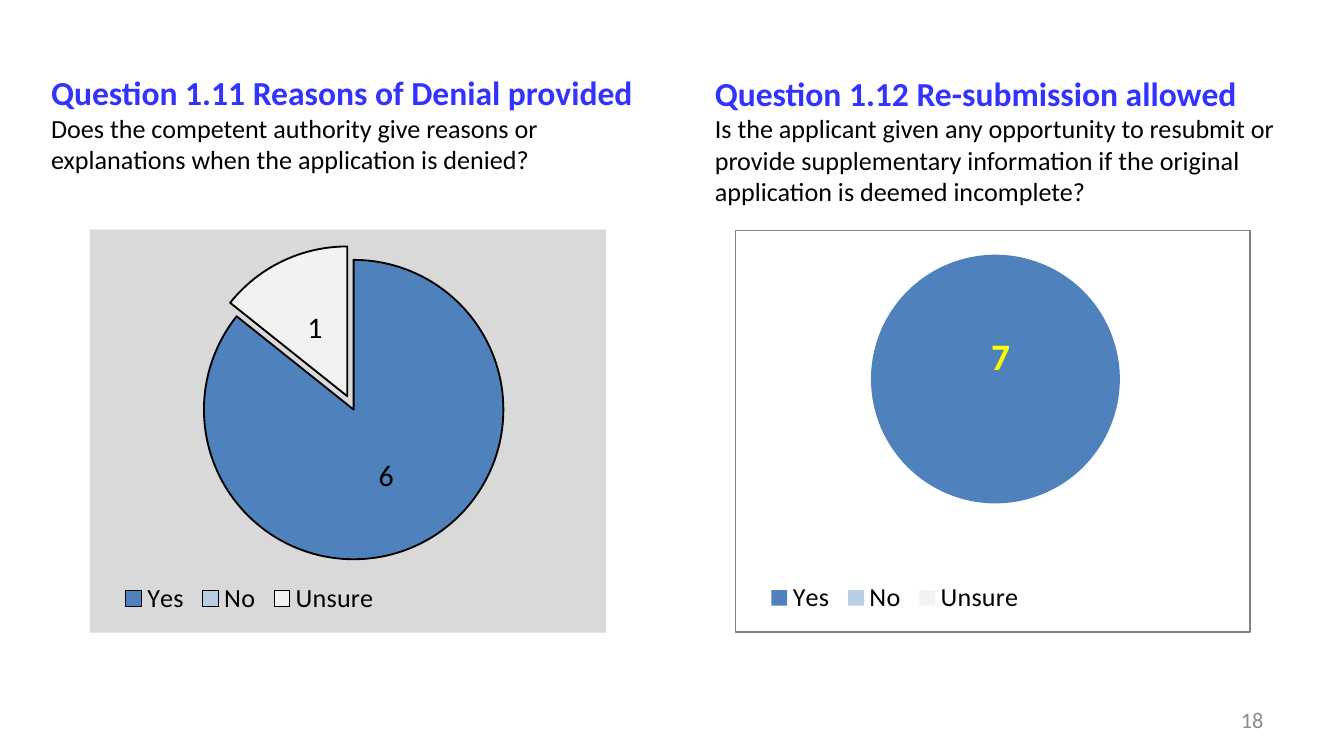
from lxml import etree
from pptx import Presentation
from pptx.chart.data import CategoryChartData
from pptx.dml.color import RGBColor
from pptx.enum.chart import XL_CHART_TYPE, XL_LABEL_POSITION, XL_LEGEND_POSITION
from pptx.enum.text import MSO_ANCHOR, MSO_AUTO_SIZE, PP_ALIGN
from pptx.oxml import parse_xml
from pptx.oxml.ns import nsdecls, qn
from pptx.util import Cm, Pt

PIE = XL_CHART_TYPE.PIE
CENTER = XL_LABEL_POSITION.CENTER
BOTTOM = XL_LEGEND_POSITION.BOTTOM
MIDDLE = MSO_ANCHOR.MIDDLE
NO_AUTOFIT = MSO_AUTO_SIZE.NONE
LEFT, RIGHT = PP_ALIGN.LEFT, PP_ALIGN.RIGHT

BLACK = RGBColor(0x00, 0x00, 0x00)
HEADING_BLUE = RGBColor(0x33, 0x33, 0xFF)
NUMBER_GRAY = RGBColor(0x8C, 0x8C, 0x8C)
YELLOW = RGBColor(0xFF, 0xFF, 0x00)
SLICES = [RGBColor(0x4F, 0x81, 0xBD), RGBColor(0xB9, 0xCD, 0xE5), RGBColor(0xF2, 0xF2, 0xF2)]
FONT = "Calibri"

GRAY_PANEL = '<a:solidFill><a:srgbClr val="D9D9D9"/></a:solidFill><a:ln><a:noFill/></a:ln>'
FRAMED_PANEL = ('<a:noFill/><a:ln w="9525"><a:solidFill><a:srgbClr val="808080"/>'
                '</a:solidFill></a:ln>')


def format_text(target, text=None, size=14, color=BLACK, bold=False):
    """Add text to a paragraph, or format an existing font when text is None."""
    font = target
    if text is not None:
        r = target.add_run()
        r.text = text
        font = r.font
    font.name, font.size, font.bold = FONT, Pt(size), bold
    font.color.rgb = color


def set_layout(parent, index, **values):
    """Place a chart part by fractions of the chart's size."""
    for old in parent.findall(qn("c:layout")):
        parent.remove(old)
    layout = parse_xml(f'<c:layout {nsdecls("c")}><c:manualLayout/></c:layout>')
    for tag, value in values.items():
        etree.SubElement(layout[0], qn(f"c:{tag}")).set("val", str(value))
    parent.insert(index, layout)


prs = Presentation()
prs.slide_width, prs.slide_height = Cm(25.4), Cm(14.29)
s = prs.slides.add_slide(prs.slide_layouts[5])

# Left question in the title
title = s.shapes.title
title.left, title.top, title.width, title.height = Cm(0.71), Cm(0.53), Cm(11.84), Cm(3.61)
tf = title.text_frame
tf.word_wrap, tf.auto_size, tf.vertical_anchor = True, NO_AUTOFIT, MIDDLE
p = tf.paragraphs[0]
p.alignment = LEFT
format_text(p, "Question 1.11 Reasons of Denial provided", size=18, color=HEADING_BLUE, bold=True)
p.add_line_break()
format_text(p, "Does the competent authority give reasons or explanations "
               "when the application is denied?")

# Right question and slide number
question = [
    ("Question 1.12 Re-submission allowed", dict(size=18, color=HEADING_BLUE, bold=True)),
    ("Is the applicant given any opportunity to resubmit or provide supplementary "
     "information if the original application is deemed incomplete?", {}),
]
number = [("18", dict(size=12, color=NUMBER_GRAY))]
for box, align, paragraphs in [
    ((13.26, 1.14, 11.43, 3), LEFT, question),
    ((18.21, 13.23, 5.92, 0.76), RIGHT, number),
]:
    tf = s.shapes.add_textbox(*map(Cm, box)).text_frame
    tf.word_wrap, tf.vertical_anchor = True, MIDDLE
    for i, (text, fmt) in enumerate(paragraphs):
        p = tf.add_paragraph() if i else tf.paragraphs[0]
        p.alignment = align
        format_text(p, text, **fmt)

# Answers: left edge, values, panel, outlined slices, label format, label shift, pie area
charts = [
    (1.7, (6, 0, 1), GRAY_PANEL, True, dict(size=16), None,
     dict(x=0.2, y=0.04, w=0.61, h=0.78)),
    (13.89, (7, 0, 0), FRAMED_PANEL, False, dict(size=20, color=YELLOW, bold=True),
     dict(x=0.01, y=-0.21), dict(x=0.25, y=0.03, w=0.51, h=0.65)),
]
for left, values, panel, outlined, label_format, label_shift, area in charts:
    data = CategoryChartData()
    data.categories = ["Yes", "No", "Unsure"]
    data.add_series("Series 1", values)
    chart = s.shapes.add_chart(PIE, Cm(left), Cm(4.34), Cm(9.75), Cm(7.62), data).chart
    chart.has_title = False
    format_text(chart.font, size=10)
    chart.has_legend = True
    legend = chart.legend
    legend.position, legend.include_in_layout = BOTTOM, False
    format_text(legend.font)

    plot = chart.plots[0]
    plot.vary_by_categories = True
    series = plot.series[0]
    labels = series.data_labels
    labels.show_value, labels.position = True, CENTER
    format_text(labels.font, **label_format)
    for i, (value, color) in enumerate(zip(values, SLICES)):
        point = series.points[i]
        point.format.fill.solid()
        point.format.fill.fore_color.rgb = color
        if outlined:
            point.format.line.color.rgb = BLACK
            point.format.line.width = Pt(1)
        else:
            point.format.line.fill.background()
        if value and not label_shift:
            continue
        label = point.data_label
        label.position = CENTER
        format_text(label.font, **label_format)
        d_lbl = series._element.findall(".//" + qn("c:dLbl"))[-1]
        if value:
            set_layout(d_lbl, 1, **label_shift)
        else:
            for child in d_lbl[1:]:
                d_lbl.remove(child)
            etree.SubElement(d_lbl, qn("c:delete")).set("val", "1")

    # Pulled-apart slices, fixed places and the panel behind the pie
    explosion = parse_xml(f'<c:explosion {nsdecls("c")} val="5"/>')
    series._element.find(qn("c:dPt")).addprevious(explosion)
    chart_xml = chart._chartSpace.find(qn("c:chart"))
    set_layout(chart_xml.find(qn("c:plotArea")), 0, layoutTarget="inner",
               xMode="edge", yMode="edge", **area)
    set_layout(chart_xml.find(qn("c:legend")), 1, xMode="edge", yMode="edge",
               x=0.05, y=0.87, w=0.52, h=0.09)
    chart_xml.addnext(parse_xml(f'<c:spPr {nsdecls("c", "a")}>{panel}</c:spPr>'))

prs.save("out.pptx")
